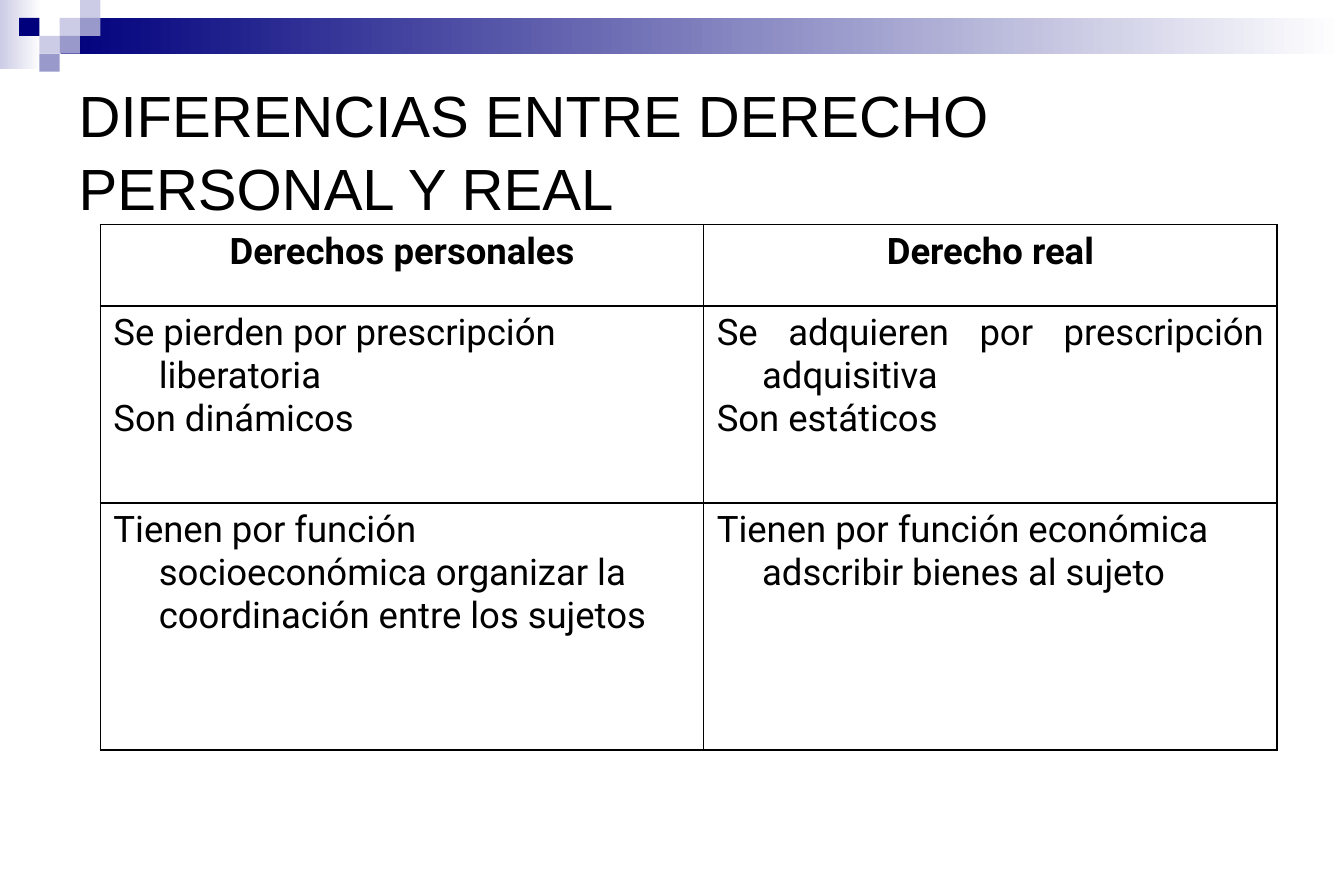
from dataclasses import dataclass

from lxml.etree import SubElement
from pptx import Presentation
from pptx.dml.color import RGBColor
from pptx.enum.shapes import MSO_SHAPE
from pptx.enum.text import MSO_ANCHOR, PP_ALIGN
from pptx.oxml.ns import qn
from pptx.slide import Slide
from pptx.table import _Cell
from pptx.util import Inches, Pt

COLORS = {
    "navy": "00007D",
    "periwinkle": "9999CC",
    "lavender": "CCCCE6",
    "white": "FFFFFF",
    "black": "000000",
}
TILE_LEFT, TILE_WIDTH, TILE_HEIGHT = 0.16, 0.17, 0.15
COLUMN_WIDTHS = (5.05, 4.8)
ROW_HEIGHTS = (0.68, 1.65, 2.07)
HANGING_INDENT = Inches(0.38)


@dataclass
class Band:
    left: float
    top: float
    width: float
    height: float
    color: str


@dataclass
class Tile:
    column: int
    row: int
    color: str


@dataclass
class CellText:
    lines: tuple[str, ...]
    align: PP_ALIGN = PP_ALIGN.LEFT
    bold: bool = False


BANDS = (
    Band(0, 0, 0.35, 0.58, "lavender"),
    Band(0.51, 0.15, 10.74, 0.3, "navy"),
)
TILES = (
    Tile(2, 1, "lavender"),
    Tile(3, 0, "lavender"),
    Tile(3, 1, "periwinkle"),
    Tile(1, 2, "lavender"),
    Tile(0, 1, "navy"),
    Tile(2, 2, "periwinkle"),
    Tile(1, 3, "periwinkle"),
)
COMPARISON = (
    (
        CellText(("Derechos personales",), PP_ALIGN.CENTER, True),
        CellText(("Derecho real",), PP_ALIGN.CENTER, True),
    ),
    (
        CellText(("Se pierden por prescripción liberatoria", "Son dinámicos")),
        CellText(
            ("Se adquieren por prescripción adquisitiva", "Son estáticos"),
            PP_ALIGN.JUSTIFY,
        ),
    ),
    (
        CellText(("Tienen por función socioeconómica organizar la "
                  "coordinación entre los sujetos",)),
        CellText(("Tienen por función económica adscribir bienes al sujeto",)),
    ),
)


def color(name: str) -> RGBColor:
    return RGBColor.from_string(COLORS[name])


def add_rectangle(page: Slide, left: float, top: float, width: float, height: float):
    box = page.shapes.add_shape(
        MSO_SHAPE.RECTANGLE, Inches(left), Inches(top), Inches(width), Inches(height)
    )
    box.shadow.inherit = False
    box.line.fill.background()
    return box


def add_band(page: Slide, band: Band) -> None:
    """Draw a rectangle that fades to white towards the right."""
    box = add_rectangle(page, band.left, band.top, band.width, band.height)
    box.fill.gradient()
    box.fill.gradient_angle = 0
    for stop, name, position in zip(
        box.fill.gradient_stops, (band.color, "white"), (0, 1)
    ):
        stop.color.rgb = color(name)
        stop.position = position


def add_tile(page: Slide, tile: Tile) -> None:
    box = add_rectangle(
        page,
        TILE_LEFT + tile.column * TILE_WIDTH,
        tile.row * TILE_HEIGHT,
        TILE_WIDTH,
        TILE_HEIGHT,
    )
    box.fill.solid()
    box.fill.fore_color.rgb = color(tile.color)


def add_title(page: Slide, text: str) -> None:
    box = page.shapes.add_textbox(
        Inches(0.56), Inches(0.5), Inches(10.12), Inches(1.5)
    )
    frame = box.text_frame
    frame.word_wrap = True
    frame.vertical_anchor = MSO_ANCHOR.MIDDLE
    para = frame.paragraphs[0]
    para.text = text
    para.line_spacing = 1.05
    para.font.name = "Arial"
    para.font.size = Pt(35)
    para.font.color.rgb = color("black")


def add_borders(cell: _Cell) -> None:
    properties = cell._tc.get_or_add_tcPr()
    for side in ("a:lnL", "a:lnR", "a:lnT", "a:lnB"):
        line = SubElement(properties, qn(side), w=str(Pt(1)))
        fill = SubElement(line, qn("a:solidFill"))
        SubElement(fill, qn("a:srgbClr"), val=COLORS["black"])


def fill_cell(cell: _Cell, content: CellText) -> None:
    add_borders(cell)
    cell.fill.background()
    cell.margin_left = cell.margin_right = Inches(0.11)
    cell.margin_top = cell.margin_bottom = Inches(0.05)
    cell.text = "\n".join(content.lines)
    for para in cell.text_frame.paragraphs:
        para.alignment = content.align
        para.font.name = "Roboto"
        para.font.size = Pt(22)
        para.font.bold = content.bold
        para.font.color.rgb = color("black")
        properties = para._p.get_or_add_pPr()
        properties.set("marL", str(HANGING_INDENT))
        properties.set("indent", str(-HANGING_INDENT))


def add_comparison(page: Slide) -> None:
    table = page.shapes.add_table(
        len(ROW_HEIGHTS), len(COLUMN_WIDTHS),
        Inches(0.84), Inches(1.88),
        Inches(sum(COLUMN_WIDTHS)), Inches(sum(ROW_HEIGHTS)),
    ).table
    table.first_row = table.horz_banding = False
    for column, width in zip(table.columns, COLUMN_WIDTHS):
        column.width = Inches(width)
    for row, height, contents in zip(table.rows, ROW_HEIGHTS, COMPARISON):
        row.height = Inches(height)
        for cell, content in zip(row.cells, contents):
            fill_cell(cell, content)


def main() -> None:
    deck = Presentation()
    deck.slide_width, deck.slide_height = Inches(11.25), Inches(7.5)
    page = deck.slides.add_slide(deck.slide_layouts[6])
    for band in BANDS:
        add_band(page, band)
    for tile in TILES:
        add_tile(page, tile)
    add_title(page, "DIFERENCIAS ENTRE DERECHO PERSONAL Y REAL")
    add_comparison(page)
    deck.save("out.pptx")


if __name__ == "__main__":
    main()
